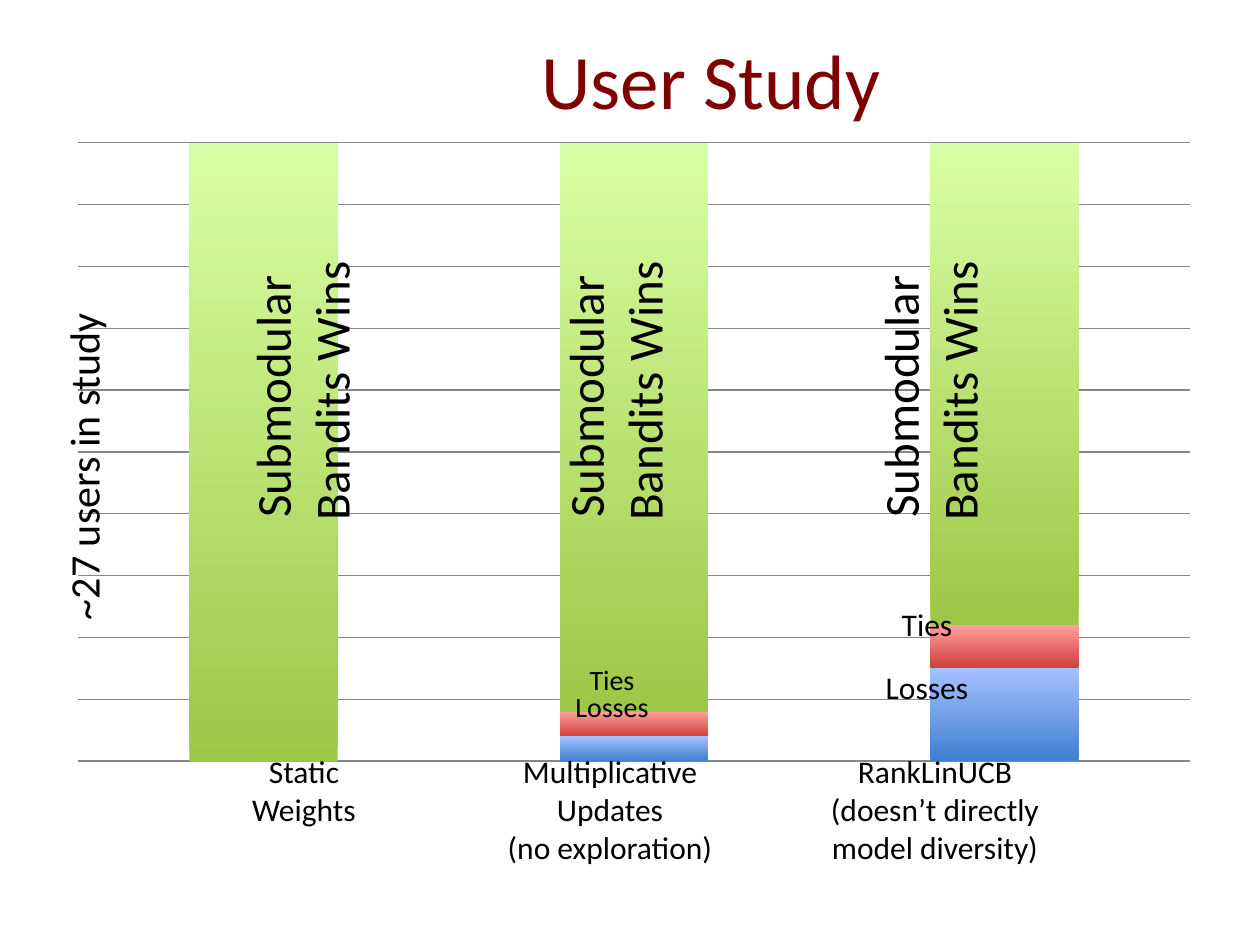
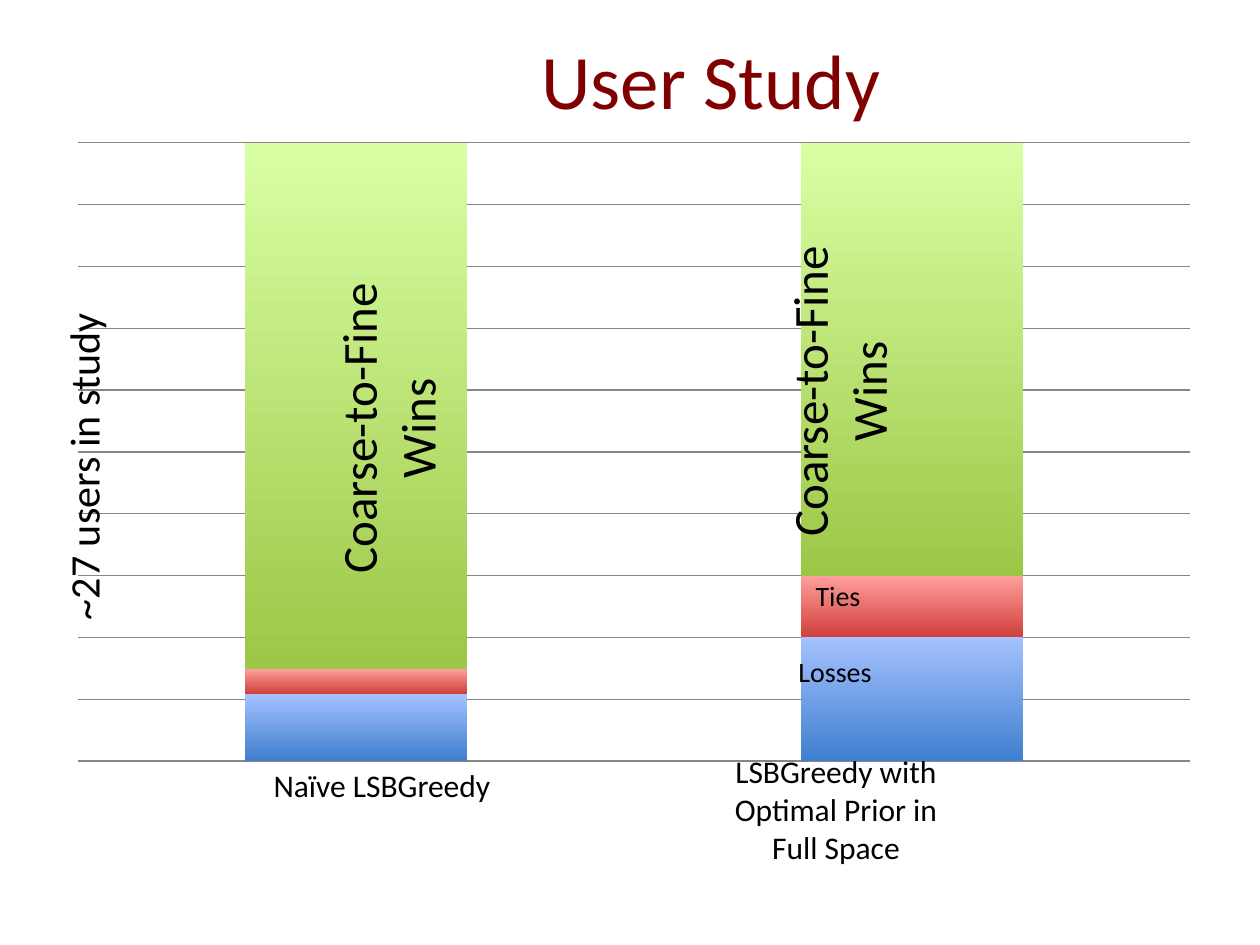
"""Builds two user study slides, each a stacked column chart with labels."""
from dataclasses import dataclass

from pptx import Presentation
from pptx import util as u
from pptx.chart import data
from pptx.dml.color import RGBColor
from pptx.enum import chart as ch, text

SCALE = 914400 / 126


@dataclass(frozen=True)
class Theme:
    """Fonts, type sizes and colours."""
    font: str = "Calibri"
    title: int = 44
    wins: int = 28
    side: int = 24
    label: int = 18
    small: int = 16
    maroon: str = "800000"
    ink: str = "000000"
    grid: str = "868686"
    fills: tuple = (("3E7FCE", "A5C1FF"), ("D0403C", "FF9F9C"), ("9CC746", "D9FFA4"))


T = Theme()


def px(n):
    """Turn px into EMU."""
    return u.Emu(round(n * SCALE))


def style(font, size, color):
    """Set the look of a font."""
    font.name = T.font
    font.size = u.Pt(size)
    font.color.rgb = RGBColor.from_string(color)


def label(slide, words, mid, top, width, size=T.label, turn=0):
    """Add a label centred on mid, as high as its lines."""
    lines = len(words.replace("\v", "\n").split("\n"))
    high = 13 + lines * size * 2.1
    box = slide.shapes.add_textbox(px(mid - width / 2), px(top), px(width), px(high))
    box.rotation = turn
    frame = box.text_frame
    frame.word_wrap = False
    frame.auto_size = text.MSO_AUTO_SIZE.SHAPE_TO_FIT_TEXT
    frame.text = words
    for para in frame.paragraphs:
        para.alignment = text.PP_ALIGN.CENTER
        for run in para.runs:
            style(run.font, size, T.ink)


def title(slide, words):
    """Add the slide title."""
    box = slide.shapes.add_textbox(px(158), px(26), px(1106), px(105))
    frame = box.text_frame
    frame.word_wrap = True
    frame.vertical_anchor = text.MSO_ANCHOR.MIDDLE
    frame.text = words
    para = frame.paragraphs[0]
    para.alignment = text.PP_ALIGN.CENTER
    style(para.runs[0].font, T.title, T.maroon)


def chart(slide, rows):
    """Add a stacked chart of losses, ties and wins."""
    info = data.CategoryChartData()
    info.categories = [str(n + 1) for n in range(len(rows[0]))]
    for n, row in enumerate(rows, 1):
        info.add_series(f"Series {n}", row)
    kind = ch.XL_CHART_TYPE.COLUMN_STACKED_100
    graph = slide.shapes.add_chart(kind, px(55), px(130), px(1158), px(644), info).chart
    style(graph.font, T.label, T.ink)
    graph.has_legend = False
    graph.has_title = False
    graph.category_axis.visible = False
    axis = graph.value_axis
    axis.visible = False
    axis.has_major_gridlines = True
    line = axis.major_gridlines.format.line
    line.color.rgb = RGBColor.from_string(T.grid)
    line.width = u.Pt(0.75)
    plot = graph.plots[0]
    plot.gap_width = 150
    plot.overlap = 100
    plot.vary_by_categories = False
    for series, shades in zip(plot.series, T.fills):
        fill = series.format.fill
        fill.gradient()
        fill.gradient_angle = 90
        for stop, shade in zip(fill.gradient_stops, shades):
            stop.color.rgb = RGBColor.from_string(shade)
        series.format.line.fill.background()


def study(deck, rows):
    """Add a slide with the shared title, chart and side label."""
    slide = deck.slides.add_slide(deck.slide_layouts[6])
    title(slide, "User Study")
    chart(slide, rows)
    label(slide, "~27 users in study", 83, 435, 345, T.side, 270)
    return slide


def rivals(deck):
    """Compare submodular bandits with three rivals."""
    slide = study(deck, ((0, 4, 15), (0, 4, 7), (100, 92, 78)))
    for mid in (301, 614, 929):
        label(slide, "Submodular \vBandits Wins", mid, 326, 307, T.wins, 270)
    label(slide, "Static\vWeights", 304, 746, 171)
    label(slide, "Multiplicative\nUpdates\n(no exploration)", 610, 746, 316)
    label(slide, "RankLinUCB\n(doesn’t directly\nmodel diversity)", 935, 746, 234)
    for mid, ties, losses, size in ((612, 656, 683, T.small), (927, 599, 662, T.label)):
        label(slide, "Ties", mid, ties, 80, size)
        label(slide, "Losses", mid, losses, 116, size)


def priors(deck):
    """Compare coarse-to-fine with two forms of LSBGreedy."""
    slide = study(deck, ((11, 20), (4, 10), (86, 70)))
    for mid, top in ((387, 363), (838, 326)):
        label(slide, "Coarse-to-Fine \nWins", mid, top, 320, T.wins, 270)
    label(slide, "Naïve LSBGreedy", 382, 760, 246)
    label(slide, "LSBGreedy with\nOptimal Prior in\nFull Space", 836, 746, 231)
    label(slide, "Ties", 838, 572, 76, T.small)
    label(slide, "Losses", 835, 648, 107, T.small)


def main():
    """Build and save the deck."""
    deck = Presentation()
    deck.slide_width, deck.slide_height = px(1260), px(945)
    rivals(deck)
    priors(deck)
    deck.save("out.pptx")


if __name__ == "__main__":
    main()
